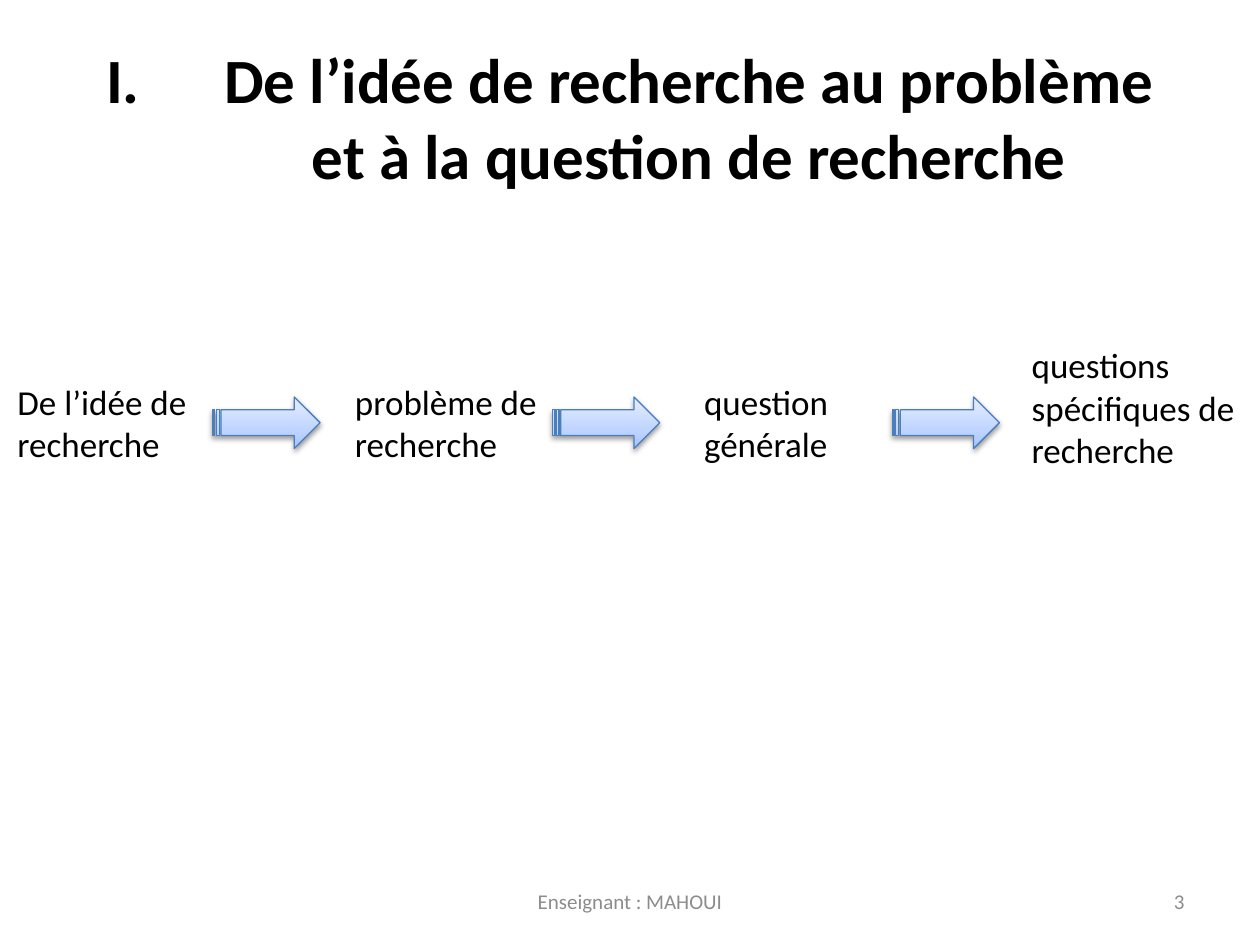
import pptx
import pptx.util
import pptx.dml.color
import pptx.enum.shapes
import pptx.enum.text
import pptx.oxml
import pptx.oxml.ns

Pt = pptx.util.Pt
ALIGN = pptx.enum.text.PP_ALIGN
ANCHOR = pptx.enum.text.MSO_ANCHOR
NS = pptx.oxml.ns.nsdecls("a")

# Content: step lines with left and top, in points
TITLE = "De l’idée de recherche au problème et à la question de recherche"
STEPS = [
    (["De l’idée de recherche"], 2.9, 213.8),
    (["problème de recherche"], 195.8, 213.8),
    (["question", "générale"], 395.3, 213.8),
    (["questions spécifiques de recherche"], 582.5, 193),
]
FOOTERS = [
    ("Enseignant : MAHOUI", 246, 228, ALIGN.CENTER),
    ("3", 516, 168, ALIGN.RIGHT),
]
STEP_W, LINE_H = 180, 24
ARROW_X, ARROW_Y, ARROW_W, ARROW_H, ARROW_STEP = 121.7, 226.8, 61.2, 29.5, 194.1
GRADIENT = [(0, "A4C4FF"), (35, "BFD4FF"), (100, "E6EEFF")]


def rgb(value):
    return pptx.dml.color.RGBColor.from_string(value)


def add_run(p, text, size, color="000000", bold=False):
    r = p.add_run()
    r.text = text
    r.font.name = "Calibri"
    r.font.size = Pt(size)
    r.font.bold = bold
    r.font.color.rgb = rgb(color)


def add_text(s, lines, box, size, color="000000", align=ALIGN.LEFT, anchor=ANCHOR.TOP):
    tf = s.shapes.add_textbox(*map(Pt, box)).text_frame
    tf.word_wrap = True
    tf.vertical_anchor = anchor
    for i, line in enumerate(lines):
        p = tf.add_paragraph() if i else tf.paragraphs[0]
        p.alignment = align
        add_run(p, line, size, color)


def add_arrow(s, left):
    sp = s.shapes.add_shape(pptx.enum.shapes.MSO_SHAPE.STRIPED_RIGHT_ARROW,
                            Pt(left), Pt(ARROW_Y), Pt(ARROW_W), Pt(ARROW_H))
    sp.line.color.rgb = rgb("4B7EBC")
    sp.line.width = Pt(0.75)
    # Three-stop gradient and soft shadow
    stops = "".join(f'<a:gs pos="{pos * 1000}"><a:srgbClr val="{color}"/></a:gs>'
                    for pos, color in GRADIENT)
    sp.line._ln.addprevious(pptx.oxml.parse_xml(
        f'<a:gradFill {NS} rotWithShape="1"><a:gsLst>{stops}</a:gsLst>'
        '<a:lin ang="16200000" scaled="0"/></a:gradFill>'))
    sp.line._ln.addnext(pptx.oxml.parse_xml(
        f'<a:effectLst {NS}><a:outerShdw blurRad="{Pt(3.1)}" dist="{Pt(1.6)}" dir="5400000" '
        'rotWithShape="0"><a:srgbClr val="000000"><a:alpha val="38000"/></a:srgbClr>'
        '</a:outerShdw></a:effectLst>'))


def main():
    prs = pptx.Presentation()
    prs.slide_width, prs.slide_height = Pt(720), Pt(540)
    s = prs.slides.add_slide(prs.slide_layouts[5])

    # Numbered title
    title = s.shapes.title
    title.left, title.top, title.width, title.height = map(Pt, (36, 21.6, 648, 90))
    tf = title.text_frame
    tf.word_wrap = True
    tf.vertical_anchor = ANCHOR.MIDDLE
    p = tf.paragraphs[0]
    p.alignment = ALIGN.CENTER
    add_run(p, TITLE, 36, bold=True)
    pPr = p._p.get_or_add_pPr()
    pPr.set("marL", str(Pt(67.5)))
    pPr.set("indent", str(-Pt(67.5)))
    pPr.append(pptx.oxml.parse_xml(f'<a:buFont {NS} typeface="+mj-lt"/>'))
    pPr.append(pptx.oxml.parse_xml(f'<a:buAutoNum {NS} type="romanUcPeriod"/>'))

    # Steps, with an arrow between neighbours
    for lines, left, top in STEPS:
        rows = 3 if lines == STEPS[-1][0] else 2
        add_text(s, lines, (left, top, STEP_W, rows * LINE_H + 7.4), 20)
    for i in range(len(STEPS) - 1):
        add_arrow(s, ARROW_X + i * ARROW_STEP)

    # Footer and slide number
    for text, left, width, align in FOOTERS:
        add_text(s, [text], (left, 500.5, width, 28.75), 12, "8C8C8C", align, ANCHOR.MIDDLE)

    prs.save("out.pptx")


if __name__ == "__main__":
    main()
